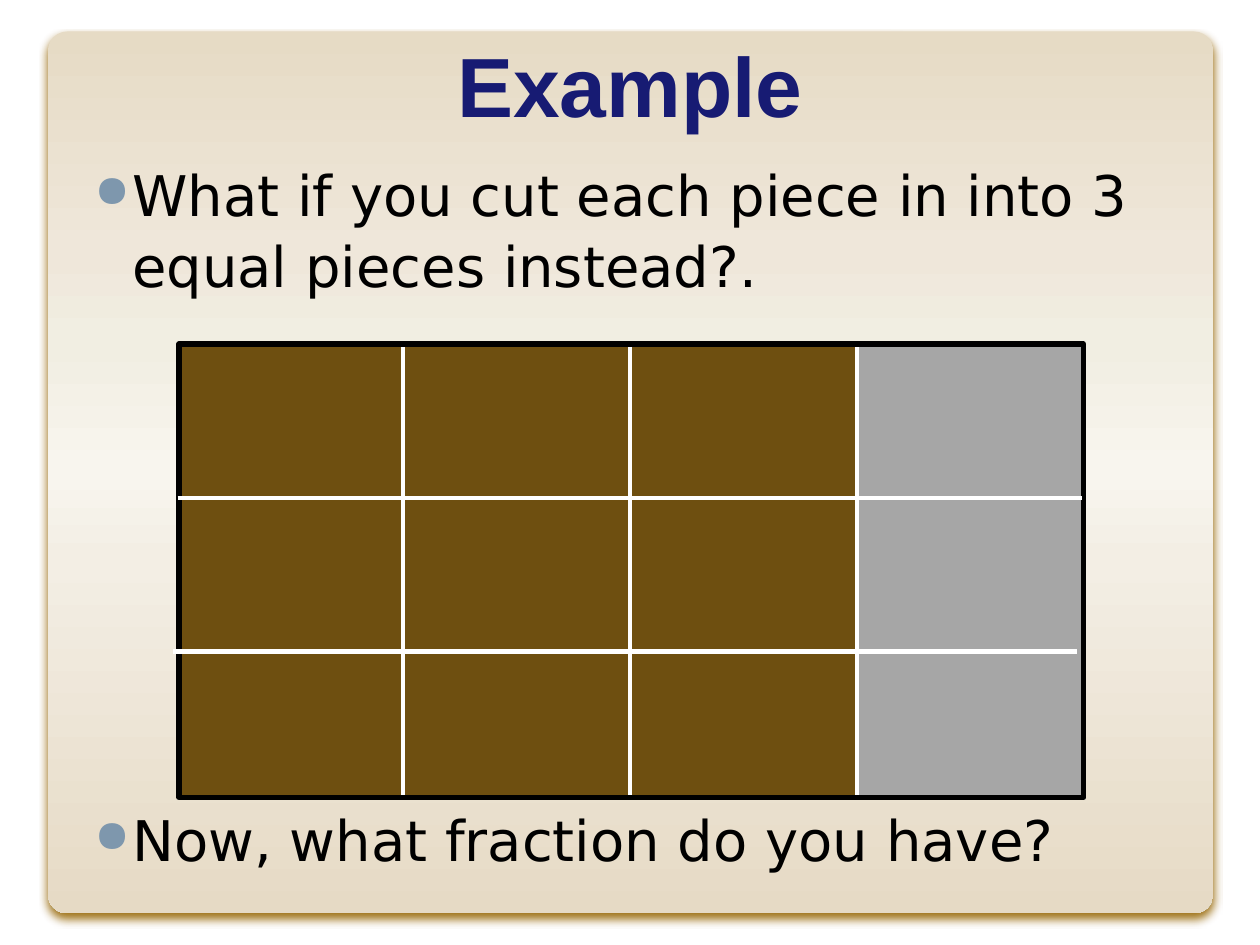
from lxml import etree
from pptx import Presentation
from pptx.dml.color import RGBColor
from pptx.enum import shapes, text
from pptx.oxml import parse_xml
from pptx.oxml.ns import nsdecls, qn
from pptx.util import Inches, Pt

COLORS = {
    "title": "171B73", "body": "000000", "bullet": "7E97AD",
    "eaten": "A6A6A6", "chocolate": "6E4F10",
    "grid": "FFFFFF", "frame": "000000", "shadow": "956400",
}
PANEL_STOPS = [(0, "E6DBC5"), (25, "EFE7DA"), (35, "F1EEE2"),
               (50, "F8F5EE"), (60, "F3EEE4"), (100, "E6DAC5")]


def color(name):
    return RGBColor.from_string(COLORS[name])


def add_text(left, top, width, height, content):
    """Add a wrapping text box and return its frame and first paragraph."""
    box = slide.shapes.add_textbox(*map(Inches, (left, top, width, height)))
    frame = box.text_frame
    frame.word_wrap = True
    frame.paragraphs[0].text = content
    return frame, frame.paragraphs[0]


presentation = Presentation()
presentation.slide_width, presentation.slide_height = Inches(10), Inches(7.5)
slide = presentation.slides.add_slide(presentation.slide_layouts[6])

# Background panel with a soft vertical gradient and shadow
panel = slide.shapes.add_shape(
    shapes.MSO_SHAPE.ROUNDED_RECTANGLE,
    Inches(0.38), Inches(0.25), Inches(9.25), Inches(7))
panel.adjustments[0] = 0.022
panel.line.fill.background()
stops = "".join(f'<a:gs pos="{position * 1000}"><a:srgbClr val="{value}"/></a:gs>'
                for position, value in PANEL_STOPS)
properties = panel._element.spPr
properties.insert(2, parse_xml(
    f'<a:gradFill {nsdecls("a")}><a:gsLst>{stops}</a:gsLst>'
    '<a:lin ang="5400000" scaled="0"/></a:gradFill>'))
properties.append(parse_xml(
    f'<a:effectLst {nsdecls("a")}><a:outerShdw blurRad="{Pt(5)}" dist="{Pt(3.6)}" '
    f'dir="5400000" rotWithShape="0"><a:srgbClr val="{COLORS["shadow"]}">'
    '<a:alpha val="90000"/></a:srgbClr></a:outerShdw></a:effectLst>'))

# Title
title_frame, title = add_text(0.5, 0.04, 9, 1.25, "Example")
title_frame.vertical_anchor = text.MSO_ANCHOR.MIDDLE
title.alignment = text.PP_ALIGN.CENTER
title.font.name, title.font.size, title.font.bold = "Arial", Pt(48), True
title.font.color.rgb = color("title")

# Bulleted questions above and below the bar
for top, height, question in [
        (1.19, 1.2, "What if you cut each piece in into 3 equal pieces instead?."),
        (6.31, 0.7, "Now, what fraction do you have?")]:
    frame, paragraph = add_text(0.5, top, 9, height, question)
    frame.margin_left = frame.margin_right = Inches(0.05)
    paragraph.line_spacing = 1.06
    paragraph.font.name, paragraph.font.size = "DejaVu Sans", Pt(32)
    paragraph.font.color.rgb = color("body")
    settings = paragraph._p.get_or_add_pPr()
    settings.set("marL", str(Inches(0.5)))
    settings.set("indent", str(Inches(-0.3)))
    bullet = parse_xml(
        f'<a:pPr {nsdecls("a")}><a:buClr><a:srgbClr val="{COLORS["bullet"]}"/></a:buClr>'
        '<a:buSzPct val="80000"/><a:buChar char="●"/></a:pPr>')
    following = settings.find(qn("a:defRPr"))
    for part in list(bullet):
        if following is None:
            settings.append(part)
        else:
            following.addprevious(part)

# Chocolate bar: four columns, the last one already eaten, inside a frame
bar_left, bar_top, bar_width, bar_height = 1.42, 2.73, 7.18, 3.6
column_width = 1.8
columns = [(bar_left, column_width, "chocolate", "grid", 2.5)]
columns += [(3.2 + column_width * i, column_width, fill, "grid", 2.5)
            for i, fill in enumerate(["chocolate", "chocolate", "eaten"])]
for left, width, fill, outline, weight in columns + [
        (bar_left, bar_width, None, "frame", 3)]:
    piece = slide.shapes.add_shape(
        shapes.MSO_SHAPE.RECTANGLE,
        Inches(left), Inches(bar_top), Inches(width), Inches(bar_height))
    piece.shadow.inherit = False
    if fill:
        piece.fill.solid()
        piece.fill.fore_color.rgb = color(fill)
    else:
        piece.fill.background()
    piece.line.color.rgb = color(outline)
    piece.line.width = Pt(weight)

# Horizontal cuts into three rows
for left, y in [(1.41, 3.95), (1.37, 5.17)]:
    cut = slide.shapes.add_connector(
        shapes.MSO_CONNECTOR.STRAIGHT,
        Inches(left), Inches(y), Inches(left + bar_width), Inches(y))
    cut.line.color.rgb = color("grid")
    cut.line.width = Pt(2.5)
    etree.SubElement(cut._element.spPr, qn("a:effectLst"))

presentation.save("out.pptx")
